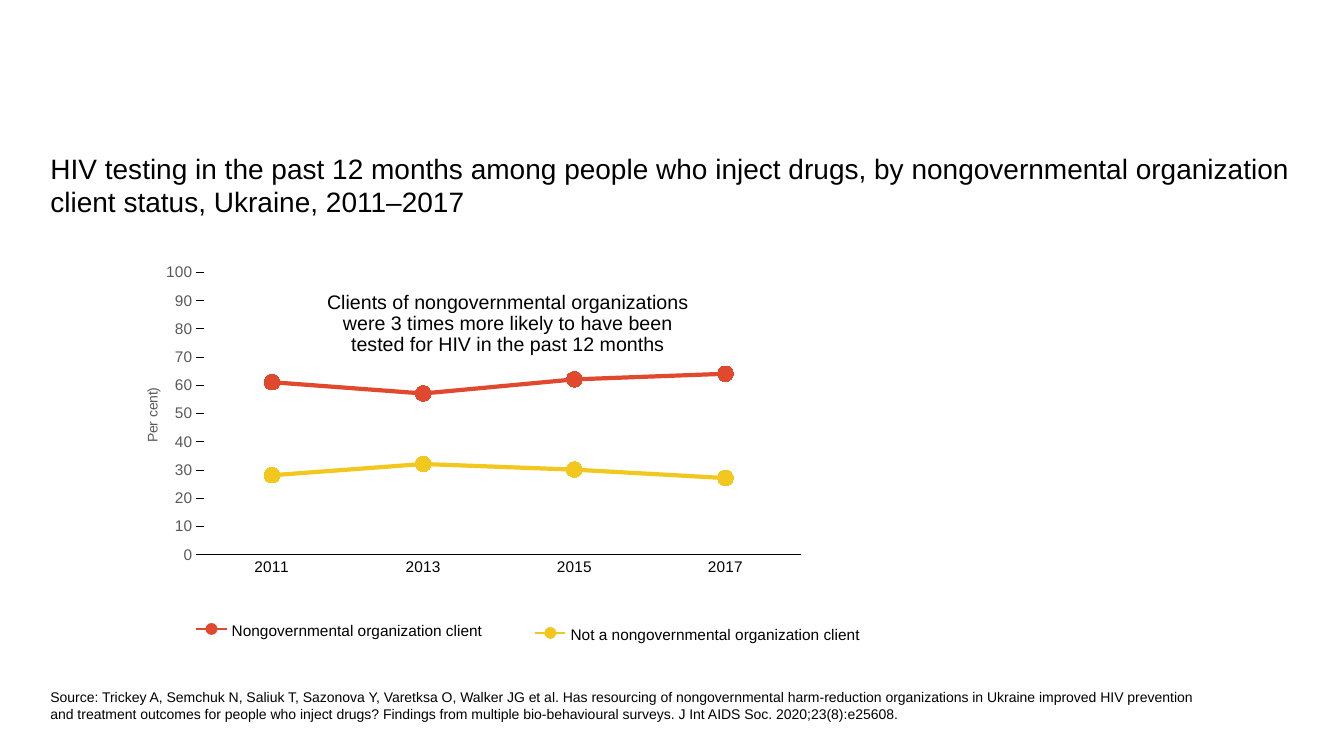
from lxml import etree
from pptx import Presentation
from pptx.chart.data import CategoryChartData
from pptx.dml.color import RGBColor
from pptx.enum.chart import XL_CHART_TYPE as ChartType, XL_MARKER_STYLE as Marker
from pptx.enum.chart import XL_TICK_MARK as TickMark
from pptx.enum.shapes import MSO_CONNECTOR as Connector, MSO_SHAPE as Shape
from pptx.enum.text import MSO_ANCHOR as Anchor, PP_ALIGN as Align
from pptx.oxml.ns import qn
from pptx.util import Cm, Pt

BLACK, GREY = "000000", "595959"


def write(frame, lines, size, align=Align.LEFT, spacing=None):
    frame.margin_left = frame.margin_right = frame.margin_top = frame.margin_bottom = 0
    frame.word_wrap = True
    frame.vertical_anchor = Anchor.TOP
    for index, line in enumerate(lines):
        paragraph = frame.add_paragraph() if index else frame.paragraphs[0]
        paragraph.alignment = align
        paragraph.line_spacing = spacing
        paragraph.space_before = Pt(0)
        run = paragraph.add_run()
        run.text = line
        run.font.name = "Arial"
        run.font.size = Pt(size)
        run.font.color.rgb = RGBColor.from_string(BLACK)


def rule(left, right, y, color, width):
    line = slide.shapes.add_connector(Connector.STRAIGHT, Cm(left), Cm(y), Cm(right), Cm(y))
    line.line.color.rgb = RGBColor.from_string(color)
    line.line.width = Pt(width)
    etree.SubElement(line._element.spPr, qn("a:effectLst"))


presentation = Presentation()
presentation.slide_width, presentation.slide_height = Cm(33.87), Cm(19.05)
slide = presentation.slides.add_slide(presentation.slide_layouts[5])

heading = slide.shapes.title
heading.left, heading.top, heading.width, heading.height = Cm(1.27), Cm(3.81), Cm(31.75), Cm(1.9)
write(heading.text_frame, ["HIV testing in the past 12 months among people who inject drugs, "
                           "by nongovernmental organization client status, Ukraine, 2011–2017"], 20, spacing=1.0)

groups = [
    ("Nongovernmental organization client", (61, 57, 62, 64), "E1492E", 4.95, 15.85),
    ("Not a nongovernmental organization client", (28, 32, 30, 27), "F2C81E", 13.49, 15.95),
]
testing = CategoryChartData(number_format="0")
testing.categories = ["2011", "2013", "2015", "2017"]
for name, percentages, *_ in groups:
    testing.add_series(name, percentages)

chart_left, chart_top, chart_width, chart_height = 3.3, 6.35, 17.3, 8.6
plot_left, plot_top, plot_width, plot_height = 4.95, 6.86, 15.24, 7.11
chart = slide.shapes.add_chart(ChartType.LINE_MARKERS, Cm(chart_left), Cm(chart_top),
                               Cm(chart_width), Cm(chart_height), testing).chart
chart.has_title = chart.has_legend = False
chart.font.name = "Arial"
chart.font.size = Pt(11)
chart.plots[0].vary_by_categories = False

for series, (name, percentages, color, *_) in zip(chart.plots[0].series, groups):
    series.smooth = False
    series.format.line.color.rgb = RGBColor.from_string(color)
    series.format.line.width = Pt(3)
    series.marker.style = Marker.CIRCLE
    series.marker.size = 11
    series.marker.format.fill.solid()
    series.marker.format.fill.fore_color.rgb = RGBColor.from_string(color)
    series.marker.format.line.fill.background()

years, percent = chart.category_axis, chart.value_axis
for axis, color in ((years, BLACK), (percent, GREY)):
    axis.major_tick_mark = axis.minor_tick_mark = TickMark.NONE
    axis.has_major_gridlines = False
    axis.tick_labels.font.size = Pt(11)
    axis.tick_labels.font.name = "Arial"
    axis.tick_labels.font.color.rgb = RGBColor.from_string(color)
years.format.line.color.rgb = RGBColor.from_string(BLACK)
years.format.line.width = Pt(0.25)
percent.format.line.fill.background()
percent.minimum_scale, percent.maximum_scale, percent.major_unit = 0, 100, 10

unit = percent.axis_title.text_frame
unit_run = unit.paragraphs[0].add_run()
unit_run.text = "Per cent)"
unit_run.font.name = "Arial"
unit_run.font.size = Pt(10)
unit_run.font.bold = False
unit_run.font.color.rgb = RGBColor.from_string(GREY)
unit._txBody.bodyPr.set("rot", "-5400000")
unit._txBody.bodyPr.set("vert", "horz")

plot_area = chart._chartSpace.chart.plotArea
placements = [
    (plot_area, {"layoutTarget": "inner", "xMode": "edge", "yMode": "edge",
                 "x": (plot_left - chart_left) / chart_width, "y": (plot_top - chart_top) / chart_height,
                 "w": plot_width / chart_width, "h": plot_height / chart_height}),
    (percent.axis_title._element, {"xMode": "edge", "yMode": "edge",
                                   "x": (3.55 - chart_left) / chart_width,
                                   "y": (9.7 - chart_top) / chart_height}),
]
for part, settings in placements:
    layout = part.find(qn("c:layout"))
    if layout is None:
        layout = etree.Element(qn("c:layout"))
        part.insert(1 if part.find(qn("c:tx")) is not None else 0, layout)
    manual = etree.SubElement(layout, qn("c:manualLayout"))
    for setting, value in settings.items():
        etree.SubElement(manual, qn("c:" + setting)).set("val", str(value))

for step in range(10):
    rule(plot_left, plot_left + 0.2, plot_top + step * plot_height / 10, BLACK, 0.25)

for name, percentages, color, key_left, key_y in groups:
    rule(key_left, key_left + 0.76, key_y, color, 2)
    dot = slide.shapes.add_shape(Shape.OVAL, Cm(key_left + 0.23), Cm(key_y - 0.15), Cm(0.3), Cm(0.3))
    dot.shadow.inherit = False
    dot.fill.solid()
    dot.fill.fore_color.rgb = RGBColor.from_string(color)
    dot.line.fill.background()
    label = slide.shapes.add_textbox(Cm(key_left + 0.89), Cm(key_y - 0.23), Cm(7.8), Cm(0.46))
    write(label.text_frame, [name], 11, spacing=Pt(14))

finding = slide.shapes.add_textbox(Cm(8), Cm(7.37), Cm(9.6), Cm(1.6))
write(finding.text_frame, ["Clients of nongovernmental organizations",
                           "were 3 times more likely to have been",
                           "tested for HIV in the past 12 months"], 14, Align.CENTER, Pt(15))

citation = slide.shapes.add_textbox(Cm(1.27), Cm(17.35), Cm(30), Cm(0.86))
write(citation.text_frame, [
    "Source: Trickey A, Semchuk N, Saliuk T, Sazonova Y, Varetksa O, Walker JG et al. Has resourcing of "
    "nongovernmental harm-reduction organizations in Ukraine improved HIV prevention",
    "and treatment outcomes for people who inject drugs? Findings from multiple bio-behavioural surveys. "
    "J Int AIDS Soc. 2020;23(8):e25608."], 10)

presentation.save("out.pptx")
